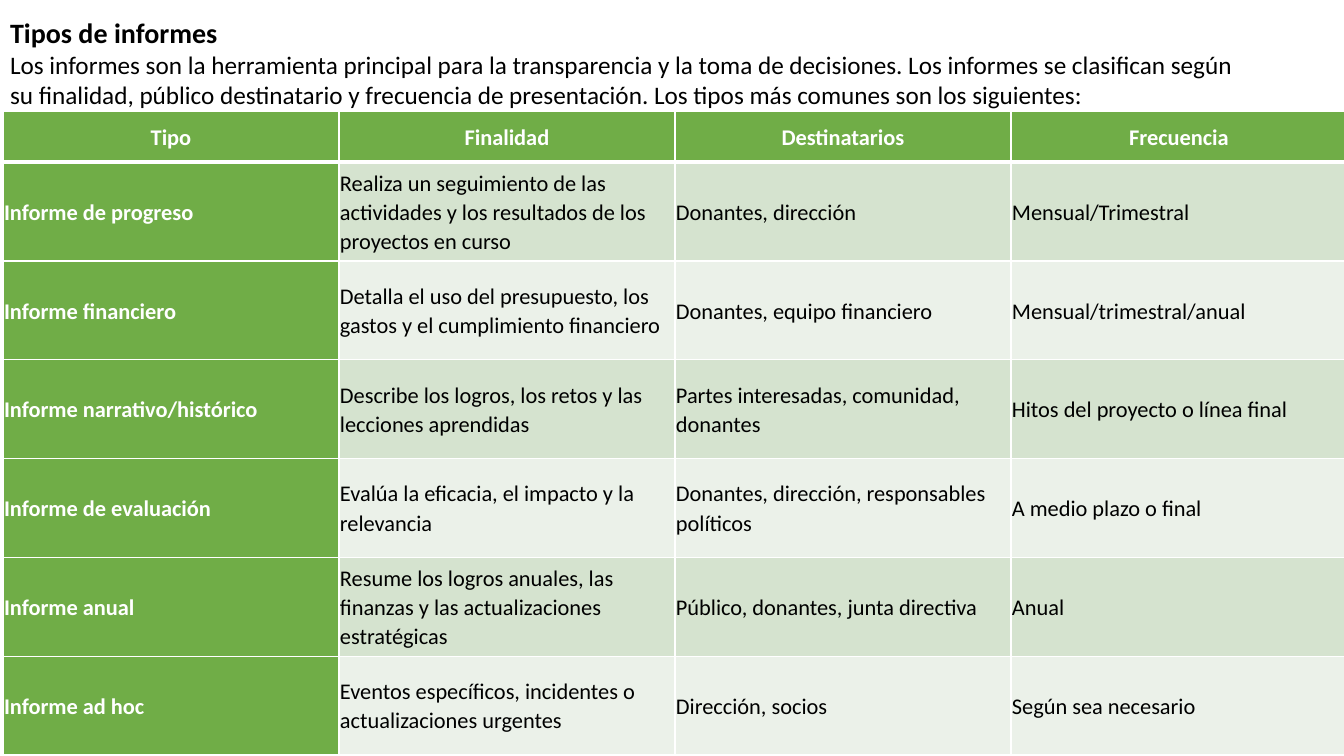
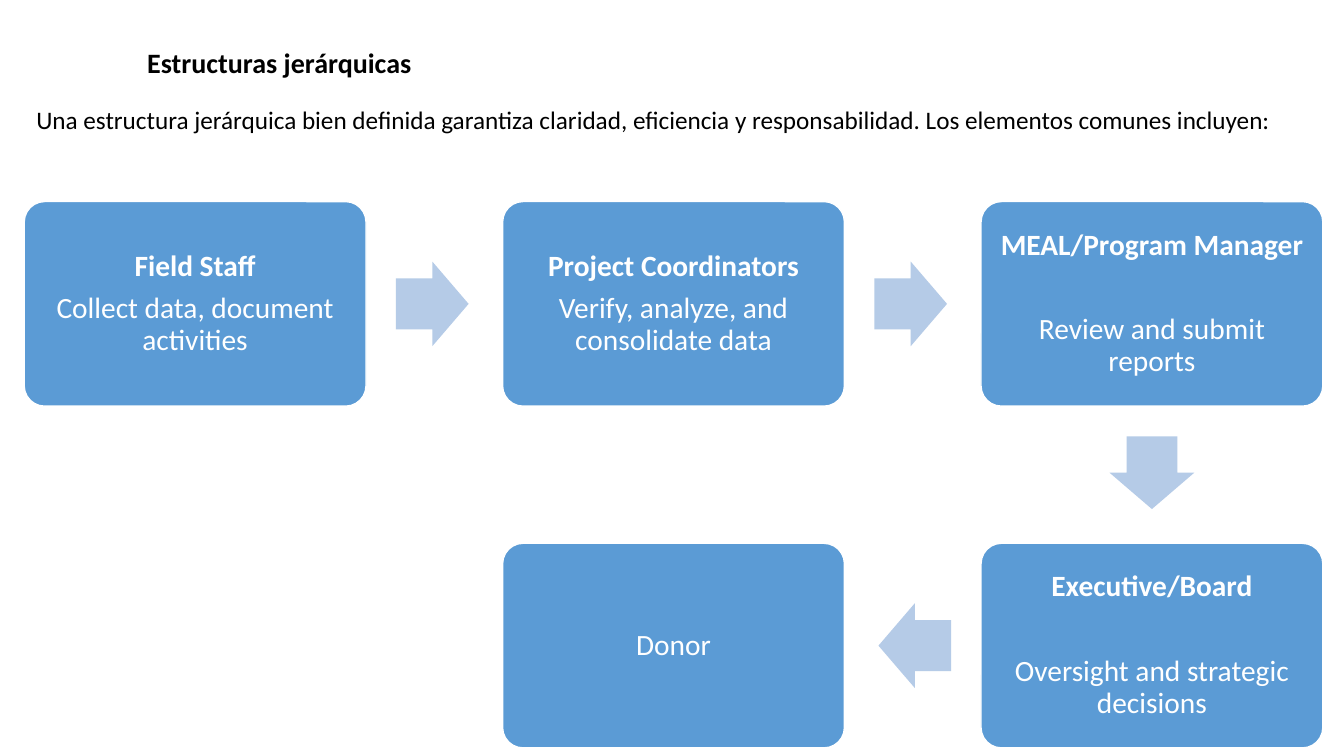
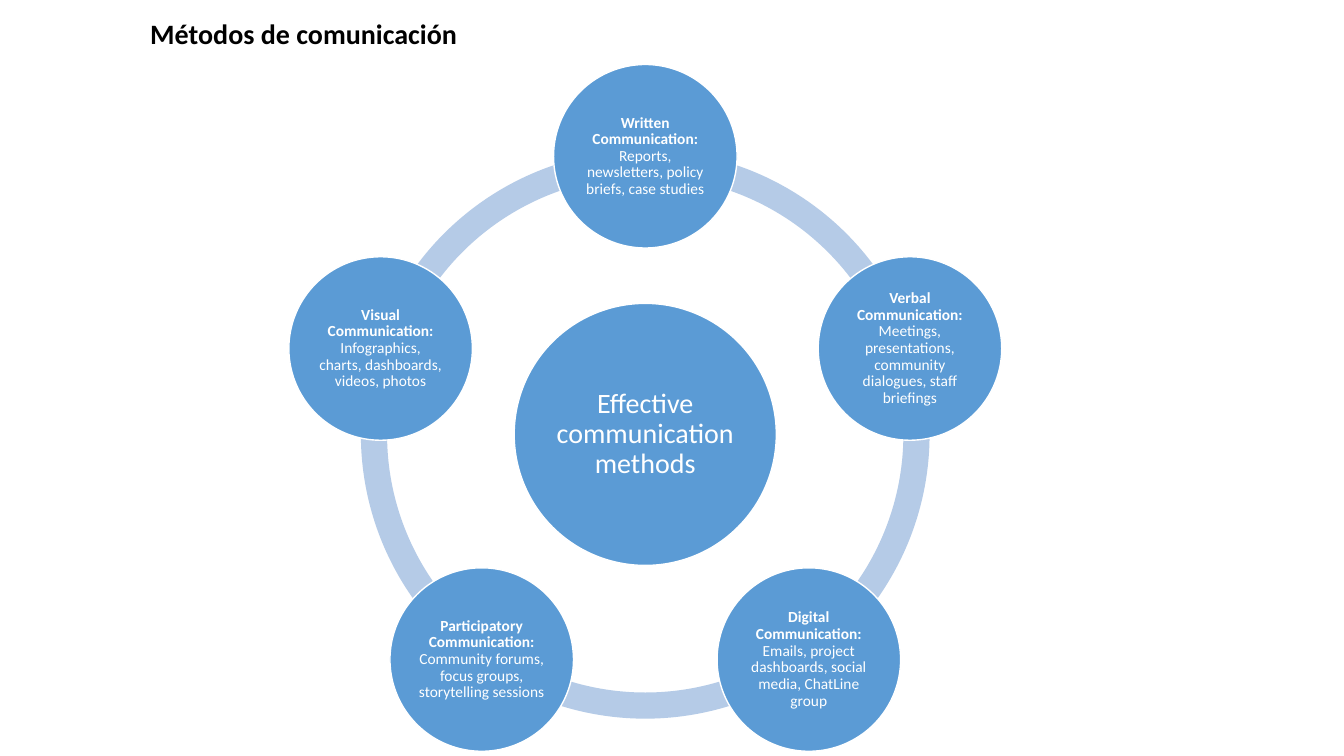
"""Build three slides on reports, reporting structure and communication methods."""
from itertools import pairwise
from math import atan2, cos, degrees, radians, sin

from lxml import etree
from pptx import Presentation
from pptx.dml.color import RGBColor
from pptx.enum.shapes import MSO_SHAPE
from pptx.enum.text import MSO_ANCHOR, MSO_AUTO_SIZE, PP_ALIGN
from pptx.oxml.ns import qn
from pptx.util import Inches, Pt

FONT = "Calibri"
BLACK, WHITE = "000000", "FFFFFF"
GREEN, GREEN_BANDS = "70AD47", ("D5E3CF", "EBF1E9")
BLUE, PALE_BLUE = "5B9BD5", "B5CBE7"
INTRO_WIDTH = 12.59

REPORTS_TITLE = "Tipos de informes"
REPORTS_INTRO = (
    "Los informes son la herramienta principal para la transparencia y la toma de decisiones. "
    "Los informes se clasifican según su finalidad, público destinatario y frecuencia de "
    "presentación. Los tipos más comunes son los siguientes:"
)
REPORTS = [
    ("Tipo", "Finalidad", "Destinatarios", "Frecuencia"),
    ("Informe de progreso",
     "Realiza un seguimiento de las actividades y los resultados de los proyectos en curso",
     "Donantes, dirección", "Mensual/Trimestral"),
    ("Informe financiero",
     "Detalla el uso del presupuesto, los gastos y el cumplimiento financiero",
     "Donantes, equipo financiero", "Mensual/trimestral/anual"),
    ("Informe narrativo/histórico",
     "Describe los logros, los retos y las lecciones aprendidas",
     "Partes interesadas, comunidad, donantes", "Hitos del proyecto o línea final"),
    ("Informe de evaluación",
     "Evalúa la eficacia, el impacto y la relevancia",
     "Donantes, dirección, responsables políticos", "A medio plazo o final"),
    ("Informe anual",
     "Resume los logros anuales, las finanzas y las actualizaciones estratégicas",
     "Público, donantes, junta directiva", "Anual"),
    ("Informe ad hoc",
     "Eventos específicos, incidentes o actualizaciones urgentes",
     "Dirección, socios", "Según sea necesario"),
]

STRUCTURE_TITLE = "Estructuras jerárquicas"
STRUCTURE_INTRO = (
    "Una estructura jerárquica bien definida garantiza claridad, eficiencia y responsabilidad. "
    "Los elementos comunes incluyen:"
)
NEAR, FAR = 7.35, 37.75
STAGES = [
    {"cell": (0, 0), "name": "Field Staff", "detail": "Collect data, document activities", "gap": NEAR},
    {"cell": (1, 0), "name": "Project Coordinators",
     "detail": "Verify, analyze, and consolidate data", "gap": NEAR},
    {"cell": (2, 0), "name": "MEAL/Program Manager", "detail": "Review and submit reports", "gap": FAR},
    {"cell": (2, 1), "name": "Executive/Board",
     "detail": "Oversight and strategic decisions", "gap": FAR},
    {"cell": (1, 1), "detail": "Donor"},
]

METHODS_TITLE = "Métodos de comunicación"
METHODS_CENTRE = "Effective communication methods"
METHODS = [
    ("Written Communication:", "Reports, newsletters, policy briefs, case studies"),
    ("Verbal Communication:", "Meetings, presentations, community dialogues, staff briefings"),
    ("Digital Communication:", "Emails, project dashboards, social media, ChatLine group"),
    ("Participatory Communication:", "Community forums, focus groups, storytelling sessions"),
    ("Visual Communication:", "Infographics, charts, dashboards, videos, photos"),
]


def colour(value):
    """Turn a hex string into a colour."""
    return RGBColor.from_string(value)


def apply(target, formats):
    """Set every attribute in a dict of format values."""
    for name, value in formats.items():
        setattr(target, name, value)


def place(shape, left, top, width, height):
    """Move and size a shape in inches."""
    sides = {"left": left, "top": top, "width": width, "height": height}
    apply(shape, {name: Inches(value) for name, value in sides.items()})


def inset(target, size):
    """Give a text frame or a cell four equal margins."""
    apply(target, {f"margin_{side}": Inches(size) for side in ("left", "right", "top", "bottom")})


def add_run(paragraph, text, size, text_colour, bold=False):
    """Add a formatted run to a paragraph."""
    run = paragraph.add_run()
    run.text = text
    apply(run.font, {"name": FONT, "size": Pt(size), "bold": bold})
    run.font.color.rgb = colour(text_colour)


def fill_placeholder(placeholder, text, box, size, bold=False):
    """Place a plain, left-aligned placeholder paragraph."""
    place(placeholder, *box)
    frame = placeholder.text_frame
    apply(frame, {"word_wrap": True, "auto_size": MSO_AUTO_SIZE.NONE,
                  "vertical_anchor": MSO_ANCHOR.TOP})
    paragraph = frame.paragraphs[0]
    properties = paragraph._p.get_or_add_pPr()
    apply(paragraph, {"alignment": PP_ALIGN.LEFT, "space_before": Pt(0)})
    properties.set("marL", "0")
    properties.set("indent", "0")
    etree.SubElement(properties, qn("a:buNone"))
    add_run(paragraph, text, size, BLACK, bold)


def add_titled_slide(presentation, title, title_box, intro=None, intro_box=None):
    """Add a slide with its title and an optional introduction."""
    layout = presentation.slide_layouts[1 if intro else 5]
    slide = presentation.slides.add_slide(layout)
    fill_placeholder(slide.shapes.title, title, title_box, 20, True)
    if intro:
        fill_placeholder(slide.placeholders[1], intro, intro_box, 18)
    return slide


def add_figure(slide, preset, box, fill, outlined=False, adjustments=()):
    """Add a flat preset shape with an optional white outline."""
    shape = slide.shapes.add_shape(preset, *(Inches(value) for value in box))
    shape.shadow.inherit = False
    shape.fill.solid()
    shape.fill.fore_color.rgb = colour(fill)
    if outlined:
        shape.line.color.rgb = colour(WHITE)
        shape.line.width = Pt(1)
    else:
        shape.line.fill.background()
    for index, value in enumerate(adjustments):
        shape.adjustments[index] = value
    return shape


def prepare_label(shape, margin):
    """Set up a centred label and return its text frame."""
    frame = shape.text_frame
    apply(frame, {"word_wrap": True, "vertical_anchor": MSO_ANCHOR.MIDDLE})
    inset(frame, margin)
    apply(frame.paragraphs[0], {"alignment": PP_ALIGN.CENTER, "line_spacing": 0.9})
    return frame


def add_circle(slide, centre_x, centre_y, diameter, margin):
    """Add a blue circle and return its first paragraph."""
    box = (centre_x - diameter / 2, centre_y - diameter / 2, diameter, diameter)
    circle = add_figure(slide, MSO_SHAPE.OVAL, box, BLUE, True)
    return prepare_label(circle, margin).paragraphs[0]


def set_borders(cell, widths):
    """Draw white cell borders, given widths in points by side."""
    properties = cell._tc.get_or_add_tcPr()
    for side, width in widths.items():
        line = etree.SubElement(properties, qn(f"a:ln{side}"), w=str(Pt(width)))
        solid = etree.SubElement(line, qn("a:solidFill"))
        etree.SubElement(solid, qn("a:srgbClr"), val=WHITE)


def build_reports(presentation):
    """Build the table of report types."""
    slide = add_titled_slide(presentation, REPORTS_TITLE, (0, 0.1, INTRO_WIDTH, 0.44),
                             REPORTS_INTRO, (0, 0.44, INTRO_WIDTH, 0.71))
    frame = slide.shapes.add_table(len(REPORTS), len(REPORTS[0]), Inches(0.03), Inches(1.11),
                                   Inches(13.33), Inches(6.39))
    table = frame.table
    apply(table, {"first_row": False, "horz_banding": False})
    for row_index, texts in enumerate(REPORTS):
        header = row_index == 0
        table.rows[row_index].height = Inches(0.5 if header else 0.98)
        for column_index, text in enumerate(texts):
            strong = header or column_index == 0
            cell = table.cell(row_index, column_index)
            set_borders(cell, {"L": 1, "R": 1, "T": 3 if row_index == 1 else 1,
                               "B": 3 if header else 1})
            cell.fill.solid()
            cell.fill.fore_color.rgb = colour(GREEN if strong else GREEN_BANDS[(row_index - 1) % 2])
            cell.vertical_anchor = MSO_ANCHOR.MIDDLE
            inset(cell, 0.01)
            paragraph = cell.text_frame.paragraphs[0]
            apply(paragraph, {"alignment": PP_ALIGN.CENTER if header else PP_ALIGN.LEFT,
                              "line_spacing": 1.07})
            add_run(paragraph, text, 16, WHITE if strong else BLACK, strong)


def build_structure(presentation):
    """Build the chain of reporting stages."""
    slide = add_titled_slide(presentation, STRUCTURE_TITLE, (1.36, 0.4, 4.02, 0.74),
                             STRUCTURE_INTRO, (0.26, 0.98, INTRO_WIDTH, 0.4))
    width, height = 3.39, 2.03
    arrow_width, arrow_height, setback = 0.72, 0.84, 0.02
    centres = []
    for stage in STAGES:
        column, row = stage["cell"]
        left, top = 0.24 + 4.745 * column, 2 + 3.39 * row
        centres.append((left + width / 2, top + height / 2))
        box = add_figure(slide, MSO_SHAPE.ROUNDED_RECTANGLE, (left, top, width, height),
                         BLUE, True, (0.1,))
        frame = prepare_label(box, 0.09)
        paragraph = frame.paragraphs[0]
        if "name" in stage:
            add_run(paragraph, stage["name"], 21, WHITE, True)
            paragraph = frame.add_paragraph()
            apply(paragraph, {"alignment": PP_ALIGN.CENTER, "line_spacing": 0.9,
                              "space_before": Pt(stage["gap"])})
        add_run(paragraph, stage["detail"], 21, WHITE)
    for (start_x, start_y), (end_x, end_y) in pairwise(centres):
        angle = atan2(end_y - start_y, end_x - start_x)
        middle_x = (start_x + end_x) / 2 - setback * cos(angle)
        middle_y = (start_y + end_y) / 2 - setback * sin(angle)
        arrow = add_figure(slide, MSO_SHAPE.RIGHT_ARROW,
                           (middle_x - arrow_width / 2, middle_y - arrow_height / 2,
                            arrow_width, arrow_height), PALE_BLUE, False, (0.6, 0.5))
        arrow.rotation = round(degrees(angle))


def build_methods(presentation):
    """Build the ring of communication methods."""
    slide = add_titled_slide(presentation, METHODS_TITLE, (1.39, 0.11, 4.02, 0.74))
    centre_x, centre_y, orbit, ring = 6.4, 4.31, 2.76, 5.64
    step = 360 / len(METHODS)
    angles = [(270 + step * index) % 360 for index in range(len(METHODS))]
    ring_box = (centre_x - ring / 2, centre_y - ring / 2, ring, ring)
    for angle in angles:
        add_figure(slide, MSO_SHAPE.BLOCK_ARC, ring_box, PALE_BLUE, False,
                   (angle * 0.6, (angle + step) % 360 * 0.6, 0.046))
    add_run(add_circle(slide, centre_x, centre_y, 2.6, 0.03), METHODS_CENTRE, 20, WHITE)
    for angle, (name, examples) in zip(angles, METHODS):
        paragraph = add_circle(slide, centre_x + orbit * cos(radians(angle)),
                               centre_y + orbit * sin(radians(angle)), 1.82, 0.02)
        add_run(paragraph, name, 11, WHITE, True)
        add_run(paragraph, f" {examples}", 11, WHITE)


def main():
    """Build and save the presentation."""
    presentation = Presentation()
    apply(presentation, {"slide_width": Inches(13.33), "slide_height": Inches(7.5)})
    for build in (build_reports, build_structure, build_methods):
        build(presentation)
    presentation.save("out.pptx")


if __name__ == "__main__":
    main()
